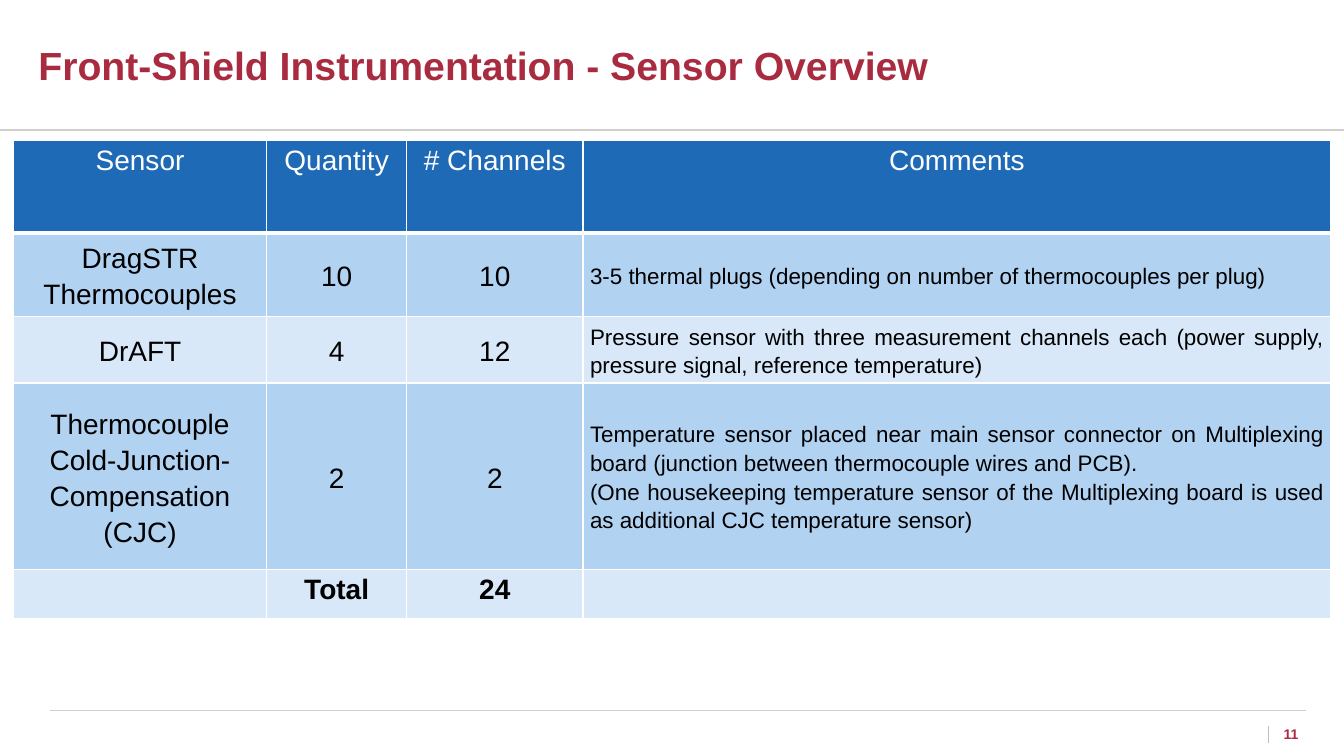
from lxml.etree import SubElement as Sub
from pptx import Presentation
from pptx.dml.color import RGBColor
from pptx.enum.shapes import MSO_CONNECTOR as Link
from pptx.enum.text import MSO_ANCHOR as Anchor, PP_ALIGN as Align
from pptx.oxml.ns import qn
from pptx.util import Cm, Pt

RED = RGBColor(0xA9, 0x2B, 0x40)
BLUE = RGBColor(0x1F, 0x6A, 0xB6)
MID = RGBColor(0xB2, 0xD2, 0xF2)
PALE = RGBColor(0xD8, 0xE8, 0xF8)
WHITE = RGBColor(0xFF, 0xFF, 0xFF)
BLACK = RGBColor(0, 0, 0)
GREY = RGBColor(0xD0, 0xCE, 0xCE)
DIM = RGBColor(0xBF, 0xBF, 0xBF)

WIDE, HIGH = 33.87, 19.05
COLS = [6.38, 3.53, 4.44, 18.85]
ROWS = [2.34, 2.11, 1.67, 4.7, 1.25]
DATA = [
    ["Sensor", "Quantity", "# Channels", "Comments"],
    ["DragSTR Thermocouples", "10", "10",
     "3-5 thermal plugs (depending on number of thermocouples per plug)"],
    ["DrAFT", "4", "12",
     "Pressure sensor with three measurement channels each "
     "(power supply, pressure signal, reference temperature)"],
    ["Thermocouple Cold-Junction-Compensation (CJC)", "2", "2",
     "Temperature sensor placed near main sensor connector on Multiplexing "
     "board (junction between thermocouple wires and PCB).\n"
     "(One housekeeping temperature sensor of the Multiplexing board is used "
     "as additional CJC temperature sensor)"],
    ["", "Total", "24", ""],
]


def write(frame, words, size=20, color=BLACK, bold=False, align=Align.CENTER, space=None):
    """Fill a text frame, one paragraph for each line of words."""
    frame.word_wrap = True
    frame.text = words
    for para in frame.paragraphs:
        para.alignment = align
        para.line_spacing = space
        font = para.font
        font.name, font.size, font.bold = "Arial", Pt(size), bold
        font.color.rgb = color


def pad(frame, left, top, right, base):
    """Set the four insets of a text frame in centimetres."""
    frame.margin_left, frame.margin_top = Cm(left), Cm(top)
    frame.margin_right, frame.margin_bottom = Cm(right), Cm(base)


def rule(slide, x, y, wide=0, high=0, color=GREY, width=1):
    """Draw a straight line from a point over a width and height."""
    line = slide.shapes.add_connector(
        Link.STRAIGHT, Cm(x), Cm(y), Cm(x + wide), Cm(y + high))
    line.line.color.rgb = color
    line.line.width = Pt(width)
    Sub(line._element.spPr, qn("a:effectLst"))


def edge(cell, base):
    """Give a cell white borders, with its own width at the base."""
    props = cell._tc.get_or_add_tcPr()
    for side, width in zip("LRTB", (1, 1, 1, base)):
        line = Sub(props, qn(f"a:ln{side}"), w=str(Pt(width)))
        Sub(Sub(line, qn("a:solidFill")), qn("a:srgbClr"), val=str(WHITE))


def header(slide, x, y, wide, high):
    """Place the title and the rule below it."""
    title = slide.shapes.title
    title.left, title.top = Cm(x + 0.97), Cm(y + 0.89)
    title.width, title.height = Cm(27.64), Cm(1.5)
    frame = title.text_frame
    write(frame, "Front-Shield Instrumentation - Sensor Overview",
          size=28, color=RED, bold=True, align=Align.LEFT)
    pad(frame, 0, 0.13, 0.25, 0.13)
    frame.vertical_anchor = Anchor.MIDDLE
    rule(slide, x, y + high, wide)


def grid(slide, x, y, wide, high):
    """Place the sensor table in its box."""
    table = slide.shapes.add_table(
        len(ROWS), len(COLS), Cm(x), Cm(y), Cm(wide), Cm(high)).table
    for col, size in zip(table.columns, COLS):
        col.width = Cm(size)
    for i, (row, size) in enumerate(zip(table.rows, ROWS)):
        row.height = Cm(size)
        head, last = i == 0, i == len(ROWS) - 1
        for j, (cell, words) in enumerate(zip(row.cells, DATA[i])):
            note = j == 3 and not head
            edge(cell, 3 if head else 1)
            cell.fill.solid()
            cell.fill.fore_color.rgb = BLUE if head else MID if i % 2 else PALE
            pad(cell, 0.18, 0, 0.18, 0)
            cell.vertical_anchor = Anchor.TOP if head or last else Anchor.MIDDLE
            write(cell.text_frame, words, size=16 if note else 20,
                  color=WHITE if head else BLACK, bold=last, space=1.15,
                  align=Align.JUSTIFY if note else Align.CENTER)


def footer(slide, x, y, wide):
    """Place the bottom rule, the divider and the page number."""
    rule(slide, x, y, wide)
    rule(slide, x + 30.71, y + 0.38, high=0.43, color=DIM, width=0.5)
    frame = slide.shapes.add_textbox(
        Cm(x + 30.89), Cm(y + 0.36), Cm(0.79), Cm(0.43)).text_frame
    write(frame, "11", size=10, color=RED, bold=True)
    pad(frame, 0, 0, 0, 0)
    frame.vertical_anchor = Anchor.MIDDLE


def main():
    """Build the slide and save it."""
    deck = Presentation()
    deck.slide_width, deck.slide_height = Cm(WIDE), Cm(HIGH)
    slide = deck.slides.add_slide(deck.slide_layouts[5])
    header(slide, 0, 0, WIDE, 3.28)
    grid(slide, 0.34, 3.53, sum(COLS), sum(ROWS))
    footer(slide, 1.25, 17.91, 31.67)
    deck.save("out.pptx")


if __name__ == "__main__":
    main()
